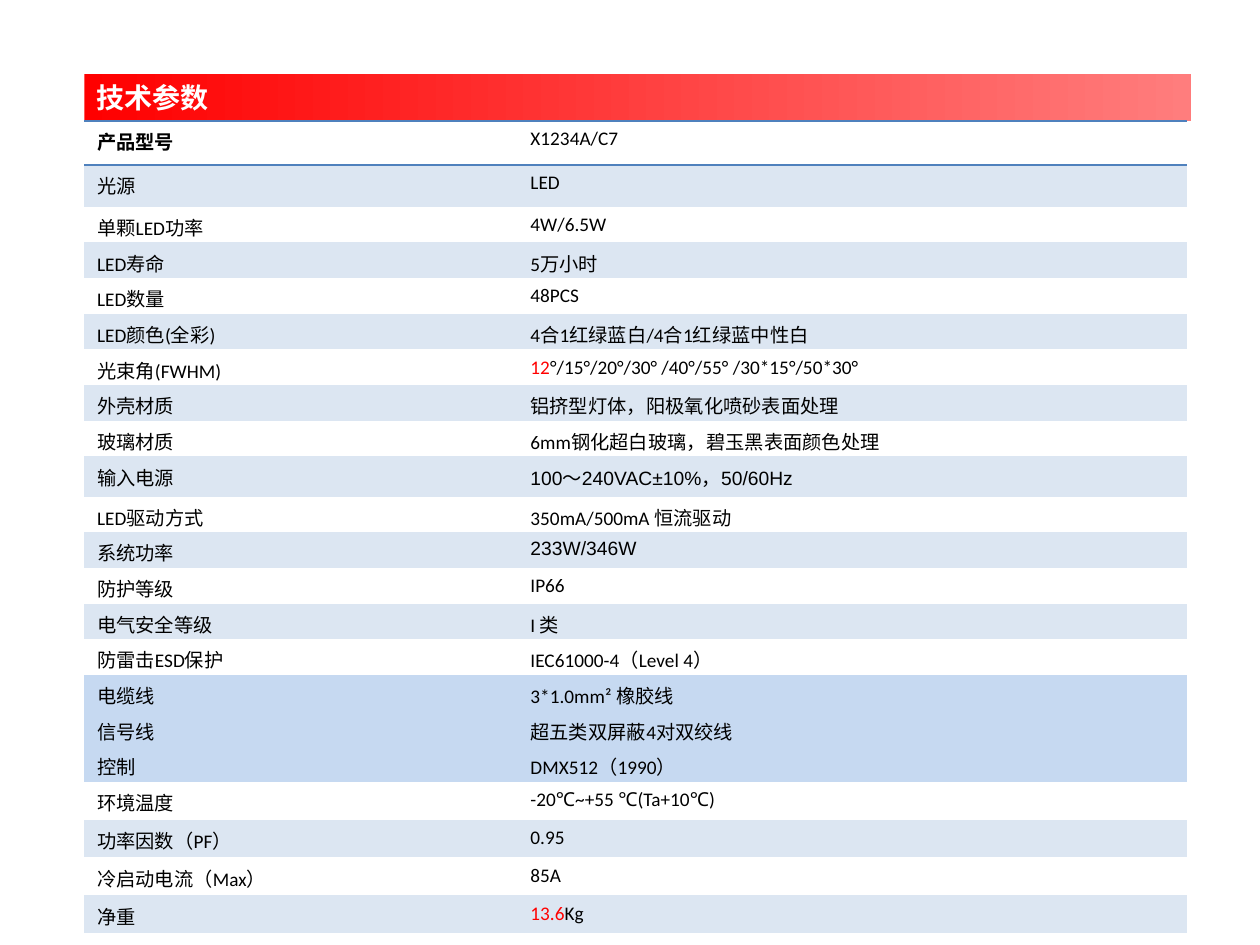
from lxml import etree
from pptx import Presentation
from pptx.dml.color import RGBColor
from pptx.enum import shapes, text
from pptx.oxml import ns
from pptx.util import Inches, Pt

RED = RGBColor(0xFF, 0, 0)
PINK = RGBColor(0xFF, 0x7D, 0x7D)
WHITE = RGBColor(0xFF, 0xFF, 0xFF)
BLACK = RGBColor(0, 0, 0)
BAND = RGBColor(0xDC, 0xE6, 0xF2)
CABLE_BAND = RGBColor(0xC6, 0xD9, 0xF1)
RULE = RGBColor(0x4F, 0x81, 0xBD)
CJK_FONT = "Noto Sans CJK SC"
NO_STYLE = "{2D5ABB26-0587-4C30-8999-92F81FD0307C}"

PARAMETERS = [
    ("产品型号", "X1234A/C7"),
    ("光源", "LED"),
    ("单颗LED功率", "4W/6.5W"),
    ("LED寿命", "5万小时"),
    ("LED数量", "48PCS"),
    ("LED颜色(全彩)", "4合1红绿蓝白/4合1红绿蓝中性白"),
    ("光束角(FWHM)", "12°/15°/20°/30° /40°/55° /30*15°/50*30°"),
    ("外壳材质", "铝挤型灯体，阳极氧化喷砂表面处理"),
    ("玻璃材质", "6mm钢化超白玻璃，碧玉黑表面颜色处理"),
    ("输入电源", "100～240VAC±10%，50/60Hz"),
    ("LED驱动方式", "350mA/500mA 恒流驱动"),
    ("系统功率", "233W/346W"),
    ("防护等级", "IP66"),
    ("电气安全等级", "I 类"),
    ("防雷击ESD保护", "IEC61000-4（Level 4）"),
    ("电缆线", "3*1.0mm² 橡胶线"),
    ("信号线", "超五类双屏蔽4对双绞线"),
    ("控制", "DMX512（1990）"),
    ("环境温度", "-20℃~+55 ℃(Ta+10℃)"),
    ("功率因数（PF）", "0.95"),
    ("冷启动电流（Max）", "85A"),
    ("净重", "13.6Kg"),
]
RED_STARTS = {"光束角(FWHM)": "12", "净重": "13.6"}
ARIAL_ROWS = ("输入电源", "系统功率")
CABLE_ROWS = ("电缆线", "信号线", "控制")
SPECIAL_HEIGHTS = {0: 0.35, 1: 0.33, 9: 0.32, 18: 0.3, 19: 0.3, 20: 0.3, 21: 0.3}
TABLE_HEIGHT = 6.45


def add_span(para, words, size, color, latin="Calibri", bold=False):
    span = para.add_run()
    span.text = words
    font = span.font
    font.size, font.bold, font.name = Pt(size), bold, latin
    font.color.rgb = color
    east_asian = etree.SubElement(span._r.get_or_add_rPr(), ns.qn("a:ea"))
    east_asian.set("typeface", CJK_FONT)


def add_rule(cell, side, position):
    line = etree.Element(ns.qn("a:" + side), w=str(Pt(1)))
    fill = etree.SubElement(line, ns.qn("a:solidFill"))
    etree.SubElement(fill, ns.qn("a:srgbClr"), val=str(RULE))
    cell._tc.get_or_add_tcPr().insert(position, line)


deck = Presentation()
deck.slide_width, deck.slide_height = Inches(10), Inches(7.5)
page = deck.slides.add_slide(deck.slide_layouts[6])

# Title bar
bar = page.shapes.add_shape(shapes.MSO_SHAPE.RECTANGLE, Inches(0.67), Inches(0.59),
                            Inches(8.78), Inches(0.37))
bar.shadow.inherit = False
bar.line.fill.background()
bar.fill.gradient()
bar.fill.gradient_angle = 0
for stop, color in zip(bar.fill.gradient_stops, (RED, PINK)):
    stop.color.rgb = color
frame = bar.text_frame
frame.vertical_anchor = text.MSO_ANCHOR.MIDDLE
frame.margin_top = frame.margin_bottom = 0
title = frame.paragraphs[0]
title.alignment = text.PP_ALIGN.LEFT
add_span(title, "技术参数", 16, WHITE, CJK_FONT, True)

# Parameter table
table = page.shapes.add_table(len(PARAMETERS), 2, Inches(0.67), Inches(0.96),
                              Inches(8.75), Inches(TABLE_HEIGHT)).table
table.first_row = table.horz_banding = False
table._tbl.tblPr.find(ns.qn("a:tableStyleId")).text = NO_STYLE
table.columns[0].width, table.columns[1].width = Inches(3.44), Inches(5.31)
regular_height = ((TABLE_HEIGHT - sum(SPECIAL_HEIGHTS.values()))
                  / (len(PARAMETERS) - len(SPECIAL_HEIGHTS)))

for row, (label, value) in enumerate(PARAMETERS):
    table.rows[row].height = Inches(SPECIAL_HEIGHTS.get(row, regular_height))
    for column in range(2):
        cell = table.cell(row, column)
        cell.margin_bottom = 0
        if label in CABLE_ROWS:
            cell.fill.solid()
            cell.fill.fore_color.rgb = CABLE_BAND
        elif row % 2:
            cell.fill.solid()
            cell.fill.fore_color.rgb = BAND
        else:
            cell.fill.background()
        # Rules above and below the model row
        if row == 0:
            add_rule(cell, "lnT", 0)
            add_rule(cell, "lnB", 1)

    add_span(table.cell(row, 0).text_frame.paragraphs[0], label, 11, BLACK, bold=row == 0)
    para = table.cell(row, 1).text_frame.paragraphs[0]
    latin = "Arial" if label in ARIAL_ROWS else "Calibri"
    red_start = RED_STARTS.get(label, "")
    if red_start:
        add_span(para, red_start, 11, RED, latin)
    add_span(para, value[len(red_start):], 11, BLACK, latin)

deck.save("out.pptx")
